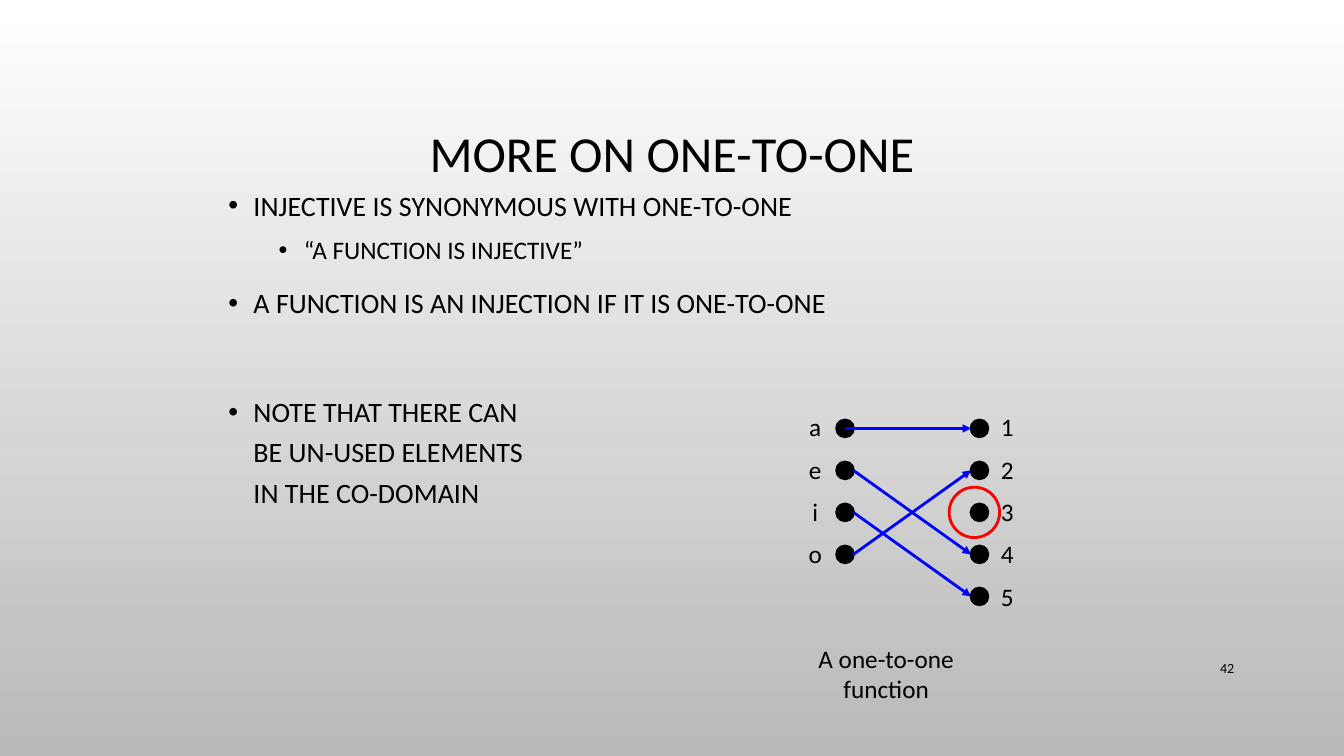
from dataclasses import dataclass

from lxml.etree import SubElement
from pptx import Presentation
from pptx.dml.color import RGBColor
from pptx.enum.shapes import MSO_CONNECTOR, MSO_SHAPE
from pptx.enum.text import MSO_ANCHOR, PP_ALIGN
from pptx.oxml.ns import qn
from pptx.util import Inches, Pt


@dataclass(frozen=True)
class Theme:
    """Colours, font and type sizes in points."""
    font: str = "Calibri"
    ink: str = "000000"
    arrow: str = "0000FF"
    highlight: str = "FF0000"
    top: str = "FFFFFF"
    bottom: str = "B9B9B9"
    title: int = 36
    body: int = 20
    small: int = 18
    number: int = 10
    stroke: int = 2


THEME = Theme()
COLUMNS, ROWS = 32, 18
WIDTH, HEIGHT = Inches(13.33), Inches(7.5)
DOT, RING = 0.4, 1.2
DOMAIN_X, CODOMAIN_X, FIRST_Y = 20.12, 23.32, 10.2
DOMAIN, CODOMAIN = "aeio", "12345"
MAPPING = ((0, 0), (1, 3), (3, 1), (2, 4))
BULLETS = (
    (0, 0, ("INJECTIVE IS SYNONYMOUS WITH ONE-TO-ONE",)),
    (1, 5, ("“A FUNCTION IS INJECTIVE”",)),
    (0, 10, ("A FUNCTION IS AN INJECTION IF IT IS ONE-TO-ONE",)),
    (0, 49, ("NOTE THAT THERE CAN", "BE UN-USED ELEMENTS", "IN THE CO-DOMAIN")),
)


def across(columns):
    """Turn grid columns into a length."""
    return round(WIDTH * columns / COLUMNS)


def down(rows):
    """Turn grid rows into a length."""
    return round(HEIGHT * rows / ROWS)


def color(code):
    """Return the colour for a hex code."""
    return RGBColor.from_string(code)


def paint_background(page):
    """Fill the page with a vertical gradient."""
    fill = page.background.fill
    fill.gradient()
    fill.gradient_angle = 270
    for stop, code in zip(fill.gradient_stops, (THEME.top, THEME.bottom)):
        stop.color.rgb = color(code)


def add_box(page, left, top, width, height, anchor=MSO_ANCHOR.TOP, wrap=True):
    """Add an empty text box on the grid and return its text frame."""
    box = page.shapes.add_textbox(across(left), down(top), across(width), down(height))
    frame = box.text_frame
    frame.word_wrap = wrap
    frame.vertical_anchor = anchor
    return frame


def write_lines(para, lines, size):
    """Write one run per line, with line breaks between them."""
    for index, line in enumerate(lines):
        if index:
            para.add_line_break()
        span = para.add_run()
        span.text = line
        span.font.name = THEME.font
        span.font.size = Pt(size)
        span.font.color.rgb = color(THEME.ink)


def write_paragraphs(frame, paragraphs, size, align, spacing=1.0):
    """Fill a frame with equally styled paragraphs."""
    for index, lines in enumerate(paragraphs):
        para = frame.add_paragraph() if index else frame.paragraphs[0]
        para.alignment = align
        para.line_spacing = spacing
        write_lines(para, lines, size)


def write_bullets(frame):
    """Fill a frame with the two-level bullet list."""
    for index, (level, before, lines) in enumerate(BULLETS):
        para = frame.add_paragraph() if index else frame.paragraphs[0]
        para.level = level
        para.line_spacing = 1.2
        para.space_before = Pt(before)
        properties = para._p.get_or_add_pPr()
        properties.set("marL", str(Inches(0.25 + 0.5 * level)))
        properties.set("indent", str(Inches(-0.25)))
        SubElement(properties, qn("a:buFont")).set("typeface", "Arial")
        SubElement(properties, qn("a:buChar")).set("char", "•")
        write_lines(para, lines, THEME.small if level else THEME.body)


def add_circle(page, x, y, size, line, filled=True):
    """Add a circle centred on a grid point."""
    circle = page.shapes.add_shape(
        MSO_SHAPE.OVAL, across(x - size / 2), down(y - size / 2), across(size), down(size))
    circle.shadow.inherit = False
    circle.line.color.rgb = color(line)
    circle.line.width = Pt(THEME.stroke)
    if filled:
        circle.fill.solid()
        circle.fill.fore_color.rgb = color(line)
    else:
        circle.fill.background()


def add_arrow(page, start, end):
    """Add an arrow between two grid points."""
    arrow = page.shapes.add_connector(
        MSO_CONNECTOR.STRAIGHT, across(start[0]), down(start[1]), across(end[0]), down(end[1]))
    arrow.line.color.rgb = color(THEME.arrow)
    arrow.line.width = Pt(THEME.stroke)
    SubElement(arrow.line._get_or_add_ln(), qn("a:tailEnd")).set("type", "triangle")
    SubElement(arrow._element.spPr, qn("a:effectLst"))


def add_mapping(page):
    """Draw the dots, labels and arrows of the one-to-one function."""
    for x, label_left, labels in ((DOMAIN_X, 19, DOMAIN), (CODOMAIN_X, 23.57, CODOMAIN)):
        for row in range(len(labels)):
            add_circle(page, x, FIRST_Y + row, DOT, THEME.ink)
        frame = add_box(page, label_left, 9.4, 0.82, 5.28, wrap=False)
        write_paragraphs(frame, labels, THEME.small, PP_ALIGN.CENTER, 1.4)
    for source, target in MAPPING:
        start_x = DOMAIN_X + (DOT / 2 if source else 0)
        add_arrow(page, (start_x, FIRST_Y + source),
                  (CODOMAIN_X - DOT / 2, FIRST_Y + target))
    caption = add_box(page, 18.28, 15.2, 5.64, 0.96, wrap=False)
    write_paragraphs(caption, [("A one-to-one", "function")], THEME.small, PP_ALIGN.CENTER)
    add_circle(page, 23.2, FIRST_Y + 2, RING, THEME.highlight, filled=False)


def main():
    """Build and save the slide."""
    deck = Presentation()
    deck.slide_width, deck.slide_height = WIDTH, HEIGHT
    page = deck.slides.add_slide(deck.slide_layouts[6])
    paint_background(page)
    number = add_box(page, 27.6, 15.43, 2.02, 0.96, MSO_ANCHOR.MIDDLE)
    write_paragraphs(number, [("42",)], THEME.number, PP_ALIGN.RIGHT)
    title = add_box(page, 2.4, 1.63, 27.2, 4.2, MSO_ANCHOR.MIDDLE)
    write_paragraphs(title, [("MORE ON ONE-TO-ONE",)], THEME.title, PP_ALIGN.CENTER, 0.9)
    write_bullets(add_box(page, 5.2, 4.2, 21.6, 11.88))
    add_mapping(page)
    deck.save("out.pptx")


if __name__ == "__main__":
    main()
